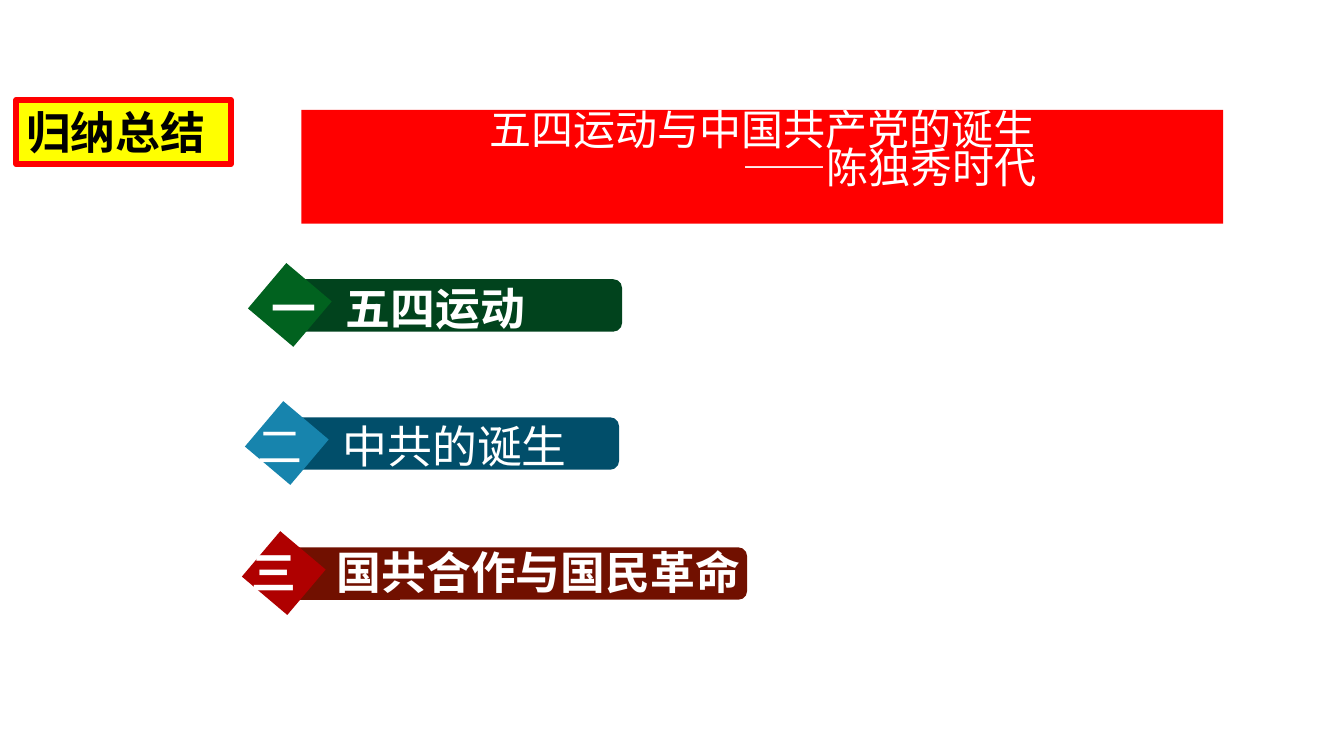
from lxml import etree
from pptx import Presentation
from pptx.dml.color import RGBColor as Rgb
from pptx.enum.shapes import MSO_SHAPE as Shape
from pptx.enum.text import MSO_ANCHOR as Anchor, PP_ALIGN as Align
from pptx.oxml.ns import qn
from pptx.util import Inches, Pt

FONT = "Noto Sans CJK SC"
HUES = {
    "white": "FFFFFF", "black": "000000", "red": "FF0000", "yellow": "FFFF00",
    "pine": "01431D", "green": "01621F", "navy": "014E6A", "blue": "1784AD",
    "brown": "711000", "crimson": "AF0000",
}
ROWS = [
    ("一", "五四运动", 2.58, 2.73, 3.38, "pine", "green", 2.59, 2.74, 0.74, True),
    ("三", "国共合作与国民革命", 2.52, 5.39, 4.68, "brown", "crimson", 2.4, 5.36, 0.84, True),
    ("二", "中共的诞生", 2.55, 4.1, 3.38, "navy", "blue", 2.46, 4.11, 0.84, False),
]


def hue(name):
    return Rgb.from_string(HUES[name])


def paint(shape, name):
    shape.fill.solid()
    shape.fill.fore_color.rgb = hue(name)


def write(para, text, size, color="white", bold=False):
    run = para.add_run()
    run.text = text
    for key, value in {"name": FONT, "size": Pt(size), "bold": bold}.items():
        setattr(run.font, key, value)
    run.font.color.rgb = hue(color)
    etree.SubElement(run.font._element, qn("a:ea"), typeface=FONT)


def block(shapes, kind, box, color):
    shape = shapes.add_shape(kind, *map(Inches, box))
    shape.shadow.inherit = False
    paint(shape, color)
    shape.line.fill.background()
    return shape


def add_title(slide):
    title = slide.shapes.title
    box = {"left": 2.99, "top": 1.09, "width": 9.14, "height": 1.13}
    for key, value in box.items():
        setattr(title, key, Inches(value))
    paint(title, "red")
    frame = title.text_frame
    frame.word_wrap = True
    frame.vertical_anchor = Anchor.TOP
    head, tail = frame.paragraphs[0], frame.add_paragraph()
    head.alignment, tail.alignment = Align.CENTER, Align.LEFT
    tail._p.get_or_add_pPr().set("marL", str(Inches(4.27)))
    for para, text in ((head, "五四运动与中国共产党的诞生"), (tail, "——陈独秀时代")):
        para.line_spacing = 0.76
        para.space_before = Pt(0)
        write(para, text, 30)


def add_tag(slide):
    tag = block(slide.shapes, Shape.RECTANGLE, (0.16, 0.99, 2.13, 0.64), "yellow")
    tag.line.color.rgb = hue("red")
    tag.line.width = Pt(4)
    para = tag.text_frame.paragraphs[0]
    para.alignment = Align.LEFT
    write(para, "归纳总结", 32, "black", True)


def add_row(slide, mark, label, x, y, wide, dark, light, left, top, gap, bold):
    shapes = slide.shapes.add_group_shape().shapes
    block(shapes, Shape.ROUNDED_RECTANGLE, (x + 0.21, y + 0.04, wide, 0.52), dark)
    gem = block(shapes, Shape.RECTANGLE, (x, y, 0.59, 0.59), light)
    gem.rotation = 310.2
    text = shapes.add_textbox(*map(Inches, (left, top, 5.16, 0.64)))
    text.text_frame.word_wrap = True
    para = text.text_frame.paragraphs[0]
    tabs = etree.SubElement(para._p.get_or_add_pPr(), qn("a:tabLst"))
    etree.SubElement(tabs, qn("a:tab"), pos=str(Inches(gap)), algn="l")
    write(para, f"{mark}\t{label}", 32, bold=bold)


def main():
    deck = Presentation()
    deck.slide_width, deck.slide_height = Inches(13.33), Inches(7.5)
    slide = deck.slides.add_slide(deck.slide_layouts[5])
    add_title(slide)
    add_tag(slide)
    for row in ROWS:
        add_row(slide, *row)
    deck.save("out.pptx")


if __name__ == "__main__":
    main()
